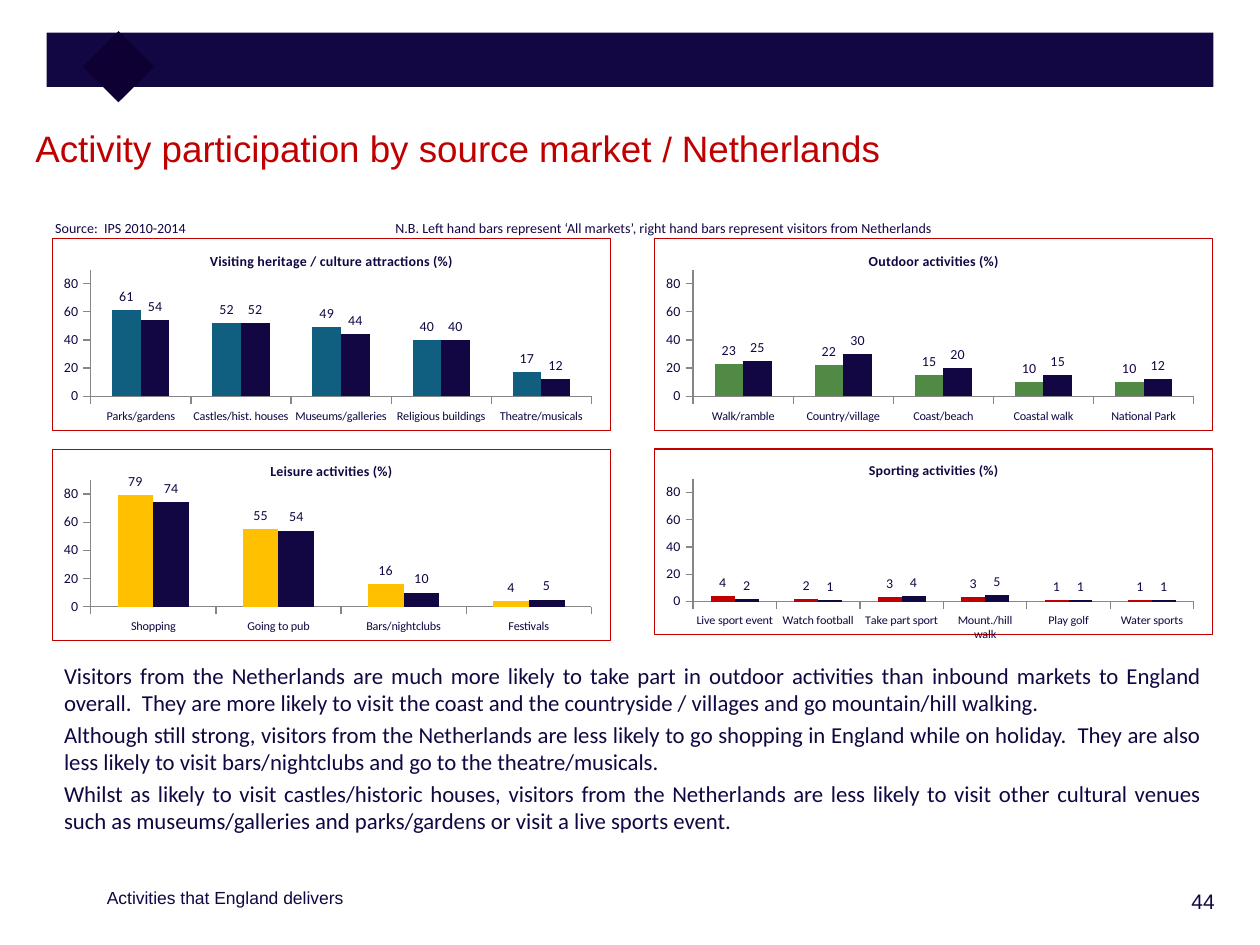
from dataclasses import dataclass

from lxml import etree
from pptx import Presentation
from pptx import util as u
from pptx.chart.data import CategoryChartData
from pptx.dml.color import RGBColor
from pptx.enum import chart as ch, shapes, text
from pptx.oxml.ns import qn

NAVY, RED, GREY = "120742", "C00000", "868686"
PLOT_LAYOUT = {"x": 0.069, "y": 0.161, "w": 0.897, "h": 0.662}


@dataclass
class ActivityChart:
    heading: str
    color: str
    categories: list[str]
    all_markets: list[int]
    netherlands: list[int]


@dataclass
class Caption:
    left: float
    top: float
    width: float
    height: float
    paragraphs: list[str]
    size: float
    font: str = "Calibri"
    align: text.PP_ALIGN = text.PP_ALIGN.LEFT


ACTIVITIES = [
    ActivityChart("Visiting heritage / culture attractions (%)", "105F80",
                  ["Parks/gardens", "Castles/hist. houses", "Museums/galleries",
                   "Religious buildings", "Theatre/musicals"],
                  [61, 52, 49, 40, 17], [54, 52, 44, 40, 12]),
    ActivityChart("Outdoor activities (%)", "518A45",
                  ["Walk/ramble", "Country/village", "Coast/beach",
                   "Coastal walk", "National Park"],
                  [23, 22, 15, 10, 10], [25, 30, 20, 15, 12]),
    ActivityChart("Leisure activities (%)", "FFC000",
                  ["Shopping", "Going to pub", "Bars/nightclubs", "Festivals"],
                  [79, 55, 16, 4], [74, 54, 10, 5]),
    ActivityChart("Sporting activities (%)", RED,
                  ["Live sport event", "Watch football", "Take part sport",
                   "Mount./hill walk", "Play golf", "Water sports"],
                  [4, 2, 3, 3, 1, 1], [2, 1, 4, 5, 1, 1]),
]

FINDINGS = [
    "Visitors from the Netherlands are much more likely to take part in outdoor "
    "activities than inbound markets to England overall.  They are more likely to "
    "visit the coast and the countryside / villages and go mountain/hill walking.",
    "Although still strong, visitors from the Netherlands are less likely to go "
    "shopping in England while on holiday.  They are also less likely to visit "
    "bars/nightclubs and go to the theatre/musicals.",
    "Whilst as likely to visit castles/historic houses, visitors from the "
    "Netherlands are less likely to visit other cultural venues such as "
    "museums/galleries and parks/gardens or visit a live sports event.",
]

CAPTIONS = [
    Caption(0.41, 5.2, 9.21, 1.8, FINDINGS, 13, align=text.PP_ALIGN.JUSTIFY),
    Caption(0.34, 1.69, 1.44, 0.18, ["Source:  IPS 2010-2014"], 8),
    Caption(3.04, 1.69, 4.7, 0.27,
            ["N.B. Left hand bars represent ‘All markets’, right hand bars "
             "represent visitors from Netherlands"], 8),
    Caption(0.75, 6.99, 2.67, 0.3, ["Activities that England delivers"], 10, "Arial"),
    Caption(8.53, 7, 1.21, 0.36, ["44"], 12, "Arial", text.PP_ALIGN.RIGHT),
]


def rgb(color: str) -> RGBColor:
    return RGBColor.from_string(color)


def style(font, size: float, color: str = NAVY, name: str = "Calibri") -> None:
    font.size, font.name = u.Pt(size), name
    font.color.rgb = rgb(color)


def add_block(slide, left: float, top: float, width: float, height: float,
              color: str, rotation: float = 0) -> None:
    block = slide.shapes.add_shape(
        shapes.MSO_SHAPE.RECTANGLE, u.Inches(left), u.Inches(top),
        u.Inches(width), u.Inches(height))
    block.shadow.inherit = False
    block.fill.solid()
    block.fill.fore_color.rgb = rgb(color)
    block.line.fill.background()
    block.rotation = rotation


def add_caption(slide, caption: Caption) -> None:
    frame = slide.shapes.add_textbox(
        u.Inches(caption.left), u.Inches(caption.top),
        u.Inches(caption.width), u.Inches(caption.height)).text_frame
    frame.word_wrap = True
    frame.text = "\n".join(caption.paragraphs)
    for index, paragraph in enumerate(frame.paragraphs):
        paragraph.alignment = caption.align
        if index:
            paragraph.space_before = u.Pt(caption.size * 0.2)
        style(paragraph.runs[0].font, caption.size, name=caption.font)


def set_title(slide) -> None:
    title = slide.shapes.title
    title.left, title.top = u.Inches(0.18), u.Inches(0.95)
    title.width, title.height = u.Inches(9.64), u.Inches(0.61)
    frame = title.text_frame
    frame.vertical_anchor = text.MSO_ANCHOR.TOP
    frame.auto_size = text.MSO_AUTO_SIZE.NONE
    paragraph = frame.paragraphs[0]
    paragraph.alignment = text.PP_ALIGN.LEFT
    for words, size in (("Activity participation by source market ", 21),
                        ("/ ", 20), ("Netherlands", 21)):
        run = paragraph.add_run()
        run.text = words
        style(run.font, size, RED, "Arial")


def fix_plot_area(chart) -> None:
    """Pin the inner plot area and give the chart frame a red border."""
    space = chart._chartSpace
    plot_area = space.chart.plotArea
    for old in plot_area.findall(qn("c:layout")):
        plot_area.remove(old)
    layout = etree.Element(qn("c:layout"))
    manual = etree.SubElement(layout, qn("c:manualLayout"))
    settings = {"layoutTarget": "inner", "xMode": "edge", "yMode": "edge", **PLOT_LAYOUT}
    for tag, value in settings.items():
        etree.SubElement(manual, qn(f"c:{tag}")).set("val", str(value))
    plot_area.insert(0, layout)

    frame = etree.Element(qn("c:spPr"))
    etree.SubElement(frame, qn("a:noFill"))
    line = etree.SubElement(frame, qn("a:ln"), w=str(u.Pt(0.75)))
    fill = etree.SubElement(line, qn("a:solidFill"))
    etree.SubElement(fill, qn("a:srgbClr"), val=RED)
    space.chart.addnext(frame)


def add_activity_chart(slide, activity: ActivityChart, left: float, top: float) -> None:
    data = CategoryChartData(number_format="0")
    data.categories = activity.categories
    data.add_series("All markets", activity.all_markets)
    data.add_series("Netherlands", activity.netherlands)
    chart = slide.shapes.add_chart(
        ch.XL_CHART_TYPE.COLUMN_CLUSTERED, u.Inches(left), u.Inches(top),
        u.Inches(4.44), u.Inches(1.53), data).chart
    style(chart.font, 12)
    chart.has_legend = False
    chart.has_title = True
    heading = chart.chart_title.text_frame
    heading.text = activity.heading
    heading_font = heading.paragraphs[0].runs[0].font
    style(heading_font, 8)
    heading_font.bold = True

    # Axes
    values = chart.value_axis
    values.minimum_scale, values.maximum_scale, values.major_unit = 0, 90, 20
    values.has_major_gridlines = False
    values.tick_labels.number_format = "0"
    values.tick_labels.number_format_is_linked = False
    for axis, size in ((chart.category_axis, 7), (values, 8)):
        axis.major_tick_mark = ch.XL_TICK_MARK.OUTSIDE
        axis.format.line.color.rgb = rgb(GREY)
        style(axis.tick_labels.font, size)

    # Bars and their values
    plot = chart.plots[0]
    plot.gap_width, plot.overlap, plot.vary_by_categories = 150, 0, False
    for series, color in zip(plot.series, (activity.color, NAVY)):
        series.format.fill.solid()
        series.format.fill.fore_color.rgb = rgb(color)
        labels = series.data_labels
        labels.show_value = True
        labels.position = ch.XL_LABEL_POSITION.OUTSIDE_END
        style(labels.font, 8)
    fix_plot_area(chart)


def main() -> None:
    prs = Presentation()
    prs.slide_width, prs.slide_height = u.Inches(10), u.Inches(7.5)
    slide = prs.slides.add_slide(prs.slide_layouts[5])

    # Header band with its diamond
    add_block(slide, 0.37, 0.26, 9.26, 0.43, NAVY)
    add_block(slide, 0.74, 0.33, 0.4, 0.4, "0E0033", 45)
    set_title(slide)

    # Two-by-two grid of charts
    for index, activity in enumerate(ACTIVITIES):
        row, column = divmod(index, 2)
        add_activity_chart(slide, activity, 0.41 + column * 4.78, 1.89 + row * 1.67)

    for caption in CAPTIONS:
        add_caption(slide, caption)
    prs.save("out.pptx")


if __name__ == "__main__":
    main()
